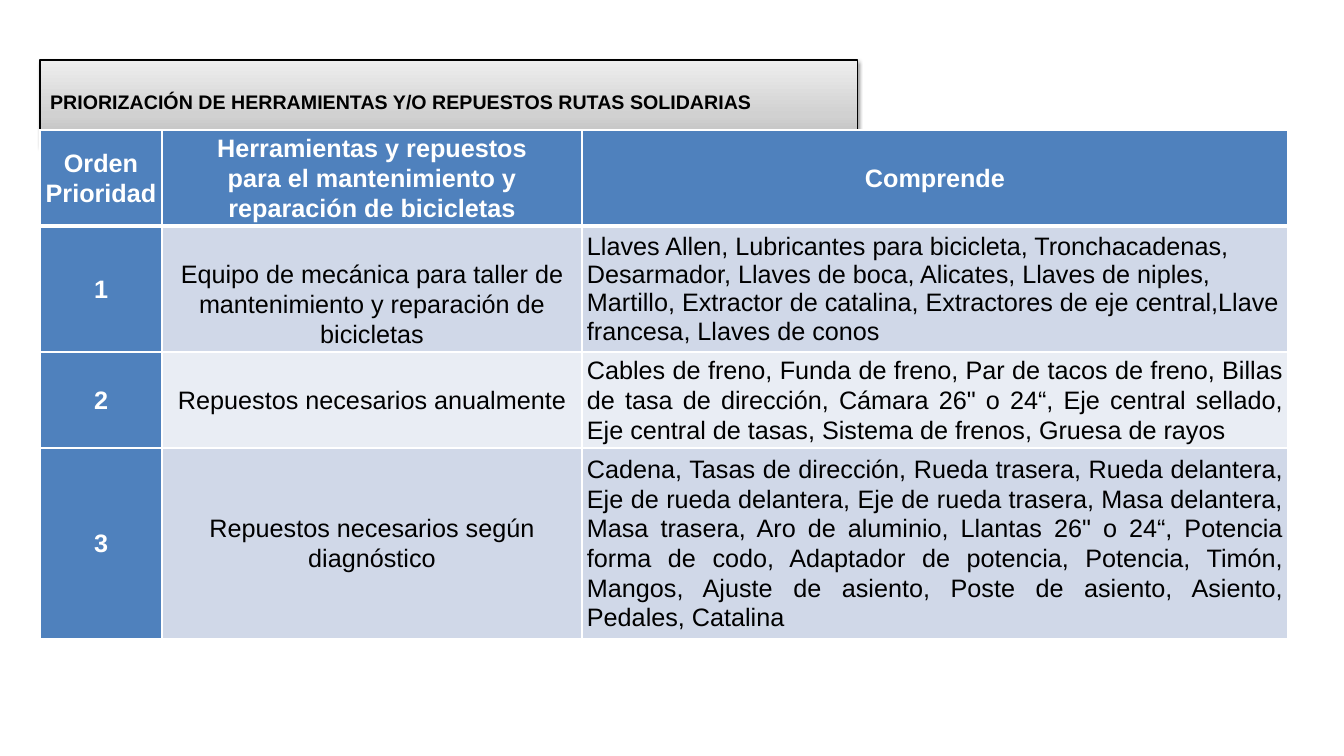
from copy import deepcopy
from dataclasses import dataclass

from lxml import etree
from pptx import Presentation
from pptx.dml.color import RGBColor
from pptx.enum.text import MSO_ANCHOR, MSO_AUTO_SIZE, PP_ALIGN
from pptx.oxml import parse_xml
from pptx.oxml.ns import nsdecls
from pptx.util import Emu, Pt

MIDDLE = MSO_ANCHOR.MIDDLE
GROW = MSO_AUTO_SIZE.SHAPE_TO_FIT_TEXT
LEFT, CENTER, JUSTIFY = PP_ALIGN.LEFT, PP_ALIGN.CENTER, PP_ALIGN.JUSTIFY
TITLE_ONLY = 5


def px(count: int) -> Emu:
    return Emu(round(count * 914400 / 100.8))


@dataclass(frozen=True)
class Theme:
    font: str = "Arial"
    title: int = 14
    body: int = 18
    white: str = "FFFFFF"
    black: str = "000000"
    head: str = "4F81BD"
    bands: tuple = ("D0D8E8", "E9EDF4")
    shade: tuple = ((0, "BDBDBD"), (0.35, "D1D1D1"), (1, "EEEEEE"))


@dataclass(frozen=True)
class Row:
    height: int
    order: str
    group: str
    items: str
    align: PP_ALIGN = JUSTIFY
    space: float = 1.05
    drop: int = 0  # extra px above the group name


THEME = Theme()
COLS = (122, 420, 706)
ROWS = (
    Row(96, "Orden Prioridad",
        "Herramientas y repuestos\npara el mantenimiento y reparación de bicicletas",
        "Comprende", CENTER),
    Row(126, "1",
        "Equipo de mecánica para taller de mantenimiento y reparación de bicicletas",
        "Llaves Allen, Lubricantes para bicicleta, Tronchacadenas, Desarmador, "
        "Llaves de boca, Alicates, Llaves de niples, Martillo, Extractor de "
        "catalina, Extractores de eje central,Llave francesa, Llaves de conos",
        LEFT, 1.0, 30),
    Row(96, "2", "Repuestos necesarios anualmente",
        "Cables de freno, Funda de freno, Par de tacos de freno, Billas de tasa "
        "de dirección, Cámara 26\" o 24“, Eje central sellado, Eje central de "
        "tasas, Sistema de frenos, Gruesa de rayos"),
    Row(190, "3", "Repuestos necesarios según diagnóstico",
        "Cadena, Tasas de dirección, Rueda trasera, Rueda delantera, Eje de "
        "rueda delantera, Eje de rueda trasera, Masa delantera, Masa trasera, "
        "Aro de aluminio, Llantas 26\" o 24“, Potencia forma de codo, Adaptador "
        "de potencia, Potencia, Timón, Mangos, Ajuste de asiento, Poste de "
        "asiento, Asiento, Pedales, Catalina"),
)


def rgb(code: str) -> RGBColor:
    return RGBColor.from_string(code)


def style(para, size: int, color: str, bold: bool, align: PP_ALIGN) -> None:
    para.alignment = align
    for run in para.runs:
        run.font.name, run.font.size = THEME.font, Pt(size)
        run.font.bold, run.font.color.rgb = bold, rgb(color)


def add_title(slide, text: str) -> None:
    title = slide.shapes.title
    title.left, title.top, title.width, title.height = map(px, (40, 85, 818, 34))
    fill = title.fill
    fill.gradient()
    fill.gradient_angle = 90
    stops = title.element.spPr.find(".//{*}gsLst")
    stops.insert(1, deepcopy(stops[0]))
    for stop, (place, color) in zip(fill.gradient_stops, THEME.shade):
        stop.position, stop.color.rgb = place, rgb(color)
    title.line.color.rgb = rgb(THEME.black)
    title.line.width = Pt(0.75)
    title.element.spPr.append(parse_xml(
        f'<a:effectLst {nsdecls("a")}><a:outerShdw blurRad="{Pt(3.1)}" '
        f'dist="{Pt(1.6)}" dir="5400000" rotWithShape="0">'
        f'<a:srgbClr val="{THEME.black}"><a:alpha val="38000"/></a:srgbClr>'
        '</a:outerShdw></a:effectLst>'))
    frame = title.text_frame
    frame.text = text
    frame.word_wrap, frame.auto_size = True, GROW
    frame.vertical_anchor = MIDDLE
    style(frame.paragraphs[0], THEME.title, THEME.black, True, LEFT)


def add_edges(cell, top: int, bottom: int) -> None:
    props = cell._tc.get_or_add_tcPr()
    widths = {"lnL": 1, "lnR": 1, "lnT": top, "lnB": bottom}
    for spot, (tag, width) in enumerate(widths.items()):
        edge = parse_xml(f'<a:{tag} {nsdecls("a")} w="{Pt(width)}"/>')
        solid = etree.SubElement(edge, edge.tag.replace(tag, "solidFill"))
        etree.SubElement(solid, edge.tag.replace(tag, "srgbClr"), val=THEME.white)
        props.insert(spot, edge)


def fill_row(table, index: int, row: Row) -> None:
    table.rows[index].height = px(row.height)
    texts = (row.order, row.group, row.items)
    for col, text in enumerate(texts):
        cell = table.cell(index, col)
        head = index == 0 or col == 0
        last = col == len(texts) - 1
        cell.vertical_anchor = MIDDLE
        cell.margin_left = cell.margin_right = px(5)
        cell.margin_top = px(row.drop if col == 1 else 0)
        cell.margin_bottom = 0
        cell.fill.solid()
        cell.fill.fore_color.rgb = rgb(
            THEME.head if head else THEME.bands[(index - 1) % 2])
        add_edges(cell, 3 if index == 1 else 1, 3 if index == 0 else 1)
        para = cell.text_frame.paragraphs[0]
        para.text = text
        para.line_spacing = row.space if last else 1.05
        style(para, THEME.body, THEME.white if head else THEME.black,
              head, row.align if last else CENTER)


def add_grid(slide) -> None:
    height = sum(row.height for row in ROWS)
    table = slide.shapes.add_table(
        len(ROWS), len(COLS), px(40), px(130), px(sum(COLS)), px(height)).table
    for column, width in zip(table.columns, COLS):
        column.width = px(width)
    for index, row in enumerate(ROWS):
        fill_row(table, index, row)


def main() -> None:
    deck = Presentation()
    deck.slide_width, deck.slide_height = px(1344), px(756)
    slide = deck.slides.add_slide(deck.slide_layouts[TITLE_ONLY])
    add_grid(slide)
    add_title(slide, "PRIORIZACIÓN DE HERRAMIENTAS Y/O REPUESTOS RUTAS SOLIDARIAS")
    deck.save("out.pptx")


if __name__ == "__main__":
    main()
